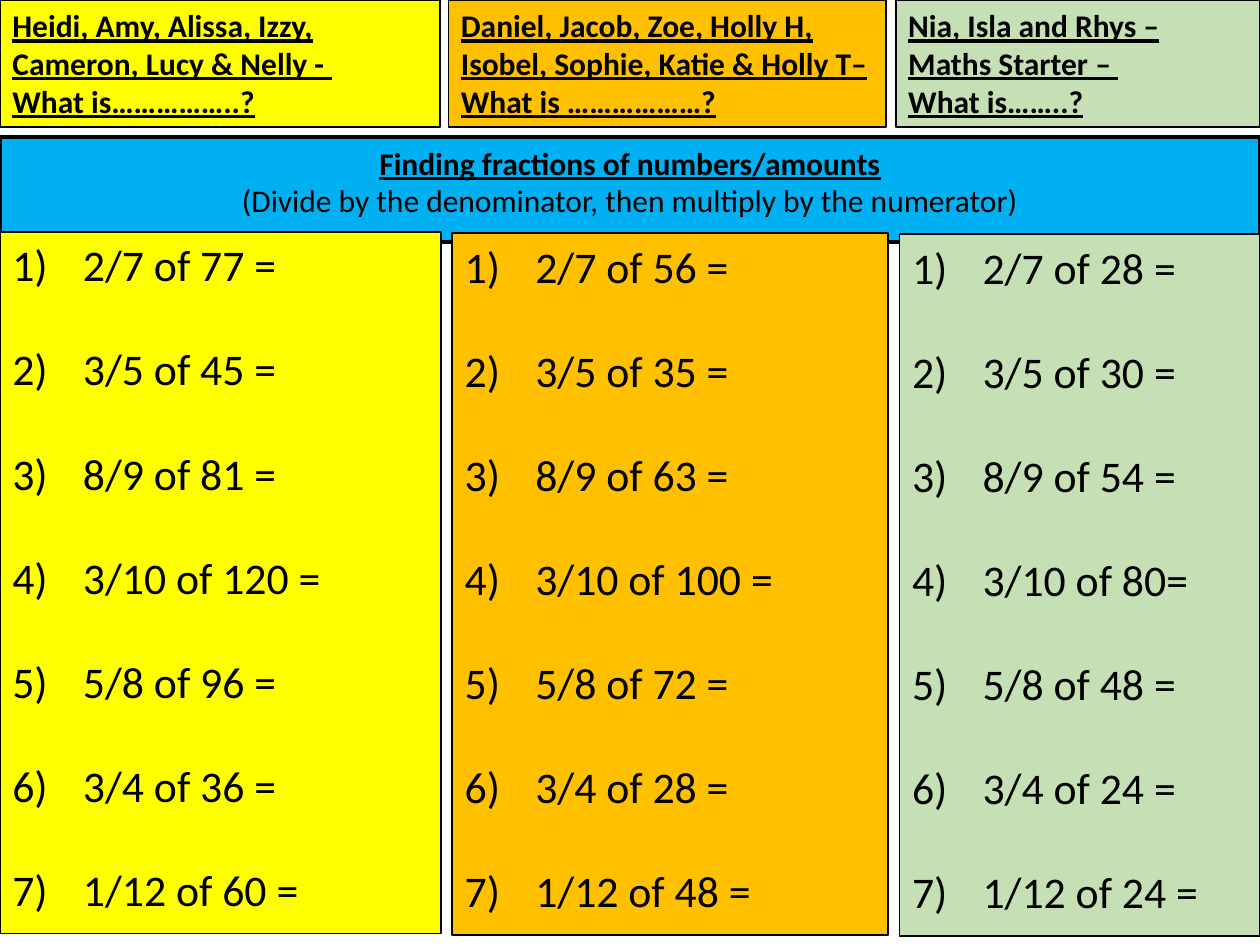
from lxml.etree import SubElement
from pptx import Presentation
from pptx.dml.color import RGBColor
from pptx.enum.shapes import MSO_SHAPE
from pptx.enum.text import MSO_ANCHOR, MSO_AUTO_SIZE, PP_ALIGN
from pptx.oxml.ns import qn
from pptx.util import Inches, Pt

BANNER = ("Finding fractions of numbers/amounts",
          "(Divide by the denominator, then multiply by the numerator)")
FRACTIONS = ("2/7", "3/5", "8/9", "3/10", "5/8", "3/4", "1/12")
GROUPS = [
    {"heading": ["Heidi, Amy, Alissa, Izzy, Cameron, Lucy & Nelly - ", "What is……………..?"],
     "amounts": ["77 =", "45 =", "81 =", "120 =", "96 =", "36 =", "60 ="],
     "colour": "FFFF00", "heading_span": (0, 3.49), "question_box": (0, 1.84, 3.5, 5.57)},
    {"heading": ["Daniel, Jacob, Zoe, Holly H, Isobel, Sophie, Katie & Holly T– What is ………………?"],
     "amounts": ["56 =", "35 =", "63 =", "100 =", "72 =", "28 =", "48 ="],
     "colour": "FFC000", "heading_span": (3.56, 3.47), "question_box": (3.59, 1.85, 3.46, 5.57)},
    {"heading": ["Nia, Isla and Rhys – Maths Starter – ", "What is……..?"],
     "amounts": ["28 =", "30 =", "54 =", "80=", "48 =", "24 =", "24 ="],
     "colour": "C5E0B4", "heading_span": (7.11, 2.89), "question_box": (7.14, 1.86, 2.86, 5.57)},
]
HEADING_HEIGHT = 1.01
BANNER_BOX = (0, 1.09, 10, 0.71)
NUMBER_INDENT = Inches(0.56)


def colour(hex_string):
    return RGBColor.from_string(hex_string)


def style_panel(panel, box, fill, line_width=1):
    panel.left, panel.top, panel.width, panel.height = map(Inches, box)
    panel.fill.solid()
    panel.fill.fore_color.rgb = colour(fill)
    panel.line.color.rgb = colour("000000")
    panel.line.width = Pt(line_width)
    frame = panel.text_frame
    frame.word_wrap = True
    frame.auto_size = MSO_AUTO_SIZE.SHAPE_TO_FIT_TEXT
    frame.vertical_anchor = MSO_ANCHOR.TOP
    return frame


def add_panel(slide, box, fill):
    panel = slide.shapes.add_shape(MSO_SHAPE.RECTANGLE, *map(Inches, box))
    panel.shadow.inherit = False
    return style_panel(panel, box, fill)


def write(frame, text, first=False, size=18, bold=False, underline=False,
          align=PP_ALIGN.LEFT, gap=0, numbered=False):
    paragraph = frame.paragraphs[0] if first else frame.add_paragraph()
    paragraph.alignment = align
    paragraph.space_before = Pt(0 if first else gap)
    run = paragraph.add_run()
    run.text = text
    font = run.font
    font.name, font.size = "Calibri", Pt(size)
    font.bold, font.underline = bold, underline
    font.color.rgb = colour("000000")
    if numbered:
        properties = paragraph._p.get_or_add_pPr()
        properties.set("marL", str(NUMBER_INDENT))
        properties.set("indent", str(-NUMBER_INDENT))
        SubElement(properties, qn("a:buFont"), typeface="+mj-lt")
        SubElement(properties, qn("a:buAutoNum"), type="arabicParenR")


def main():
    deck = Presentation()
    deck.slide_width, deck.slide_height = Inches(10), Inches(7.5)
    slide = deck.slides.add_slide(deck.slide_layouts[5])

    for group in GROUPS:
        left, width = group["heading_span"]
        heading = add_panel(slide, (left, 0, width, HEADING_HEIGHT), group["colour"])
        for index, text in enumerate(group["heading"]):
            write(heading, text, first=index == 0, bold=True, underline=True)

        questions = add_panel(slide, group["question_box"], group["colour"])
        for index, (fraction, amount) in enumerate(zip(FRACTIONS, group["amounts"])):
            write(questions, f"{fraction} of {amount}", first=index == 0,
                  size=25, gap=29.5, numbered=True)

    banner = style_panel(slide.shapes.title, BANNER_BOX, "00B0F0", line_width=2.25)
    topic, method = BANNER
    write(banner, topic, first=True, bold=True, underline=True, align=PP_ALIGN.CENTER)
    write(banner, method, align=PP_ALIGN.CENTER)

    deck.save("out.pptx")


if __name__ == "__main__":
    main()
